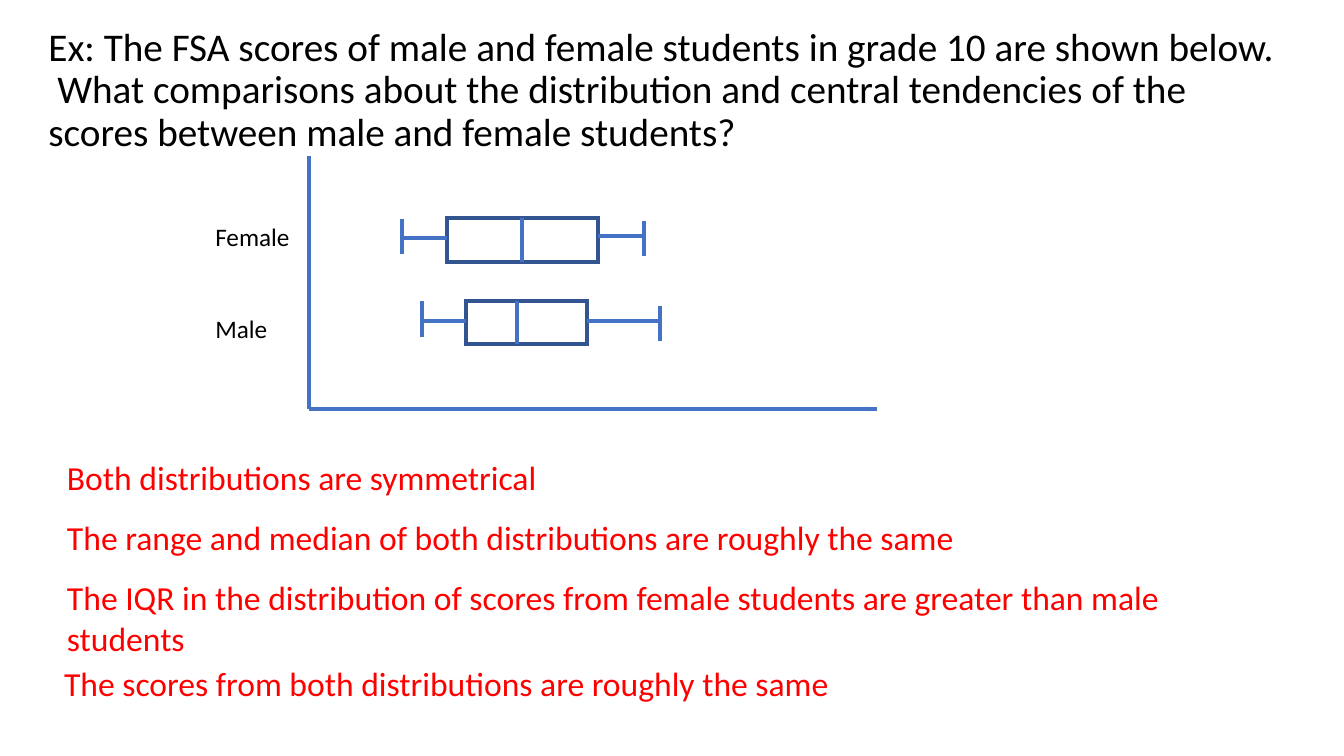
from lxml.etree import SubElement
from pptx import Presentation
from pptx.dml.color import RGBColor
from pptx.enum.shapes import MSO_CONNECTOR, MSO_SHAPE
from pptx.enum.text import MSO_AUTO_SIZE
from pptx.oxml.ns import qn
from pptx.util import Pt

THEME = {
    "font": "Calibri",
    "text": RGBColor.from_string("000000"),
    "answer": RGBColor.from_string("FF0000"),
    "line": RGBColor.from_string("4472C4"),
    "box": RGBColor.from_string("325491"),
    "question_size": Pt(28),
    "label_size": Pt(18),
    "answer_size": Pt(24),
    "line_width": Pt(3),
}


def add_line(x1, y1, x2, y2):
    connector = shapes.add_connector(
        MSO_CONNECTOR.STRAIGHT, Pt(x1), Pt(y1), Pt(x2), Pt(y2))
    connector.line.color.rgb = THEME["line"]
    connector.line.width = THEME["line_width"]
    SubElement(connector._element.spPr, qn("a:effectLst"))


def write_text(shape, text, size, color, auto_size):
    frame = shape.text_frame
    frame.word_wrap = True
    frame.auto_size = auto_size
    paragraph = frame.paragraphs[0]
    run = paragraph.add_run()
    run.text = text
    for name, value in {"name": THEME["font"], "size": size}.items():
        setattr(run.font, name, value)
    run.font.color.rgb = color
    return paragraph


presentation = Presentation()
presentation.slide_width = Pt(960)
presentation.slide_height = Pt(540)
slide = presentation.slides.add_slide(presentation.slide_layouts[1])
shapes = slide.shapes
title = shapes.title._element
title.getparent().remove(title)

question = slide.placeholders[1]
question_area = {"left": 27.4, "top": 16.2, "width": 893.5, "height": 104.4}
for name, value in question_area.items():
    setattr(question, name, Pt(value))
paragraph = write_text(
    question,
    "Ex: The FSA scores of male and female students in grade 10 are shown below. "
    " What comparisons about the distribution and central tendencies of the "
    "scores between male and female students?",
    THEME["question_size"], THEME["text"], MSO_AUTO_SIZE.NONE)
for name, value in {"line_spacing": 0.9, "space_before": Pt(10)}.items():
    setattr(paragraph, name, value)
properties = paragraph._p.get_or_add_pPr()
for name in ("marL", "indent"):
    properties.set(name, "0")
SubElement(properties, qn("a:buNone"))

BOX_HEIGHT, CAP_HEIGHT = 31, 25.2
box_plots = [
    {"name": "Female", "label_top": 154.4, "top": 155.9,
     "low": 287.3, "first": 319.5, "median": 373, "third": 427, "high": 460,
     "low_y": 170.3, "high_y": 168.5, "low_cap": 156.2, "high_cap": 157.7},
    {"name": "Male", "label_top": 220.3, "top": 215,
     "low": 301.7, "first": 332.6, "median": 369.4, "third": 419.2, "high": 471.6,
     "low_y": 229.5, "high_y": 229.5, "low_cap": 215.3, "high_cap": 218.6},
]
for plot in box_plots:
    box = shapes.add_shape(
        MSO_SHAPE.RECTANGLE, Pt(plot["first"]), Pt(plot["top"]),
        Pt(plot["third"] - plot["first"]), Pt(BOX_HEIGHT))
    box.shadow.inherit = False
    box.fill.background()
    box.line.color.rgb = THEME["box"]
    box.line.width = THEME["line_width"]
    SubElement(box.line._get_or_add_ln(), qn("a:miter")).set("lim", "800000")
    for x, top, height in [
        (plot["median"], plot["top"], BOX_HEIGHT),
        (plot["low"], plot["low_cap"], CAP_HEIGHT),
        (plot["high"], plot["high_cap"], CAP_HEIGHT),
    ]:
        add_line(x, top, x, top + height)
    for start, end, y in [
        (plot["low"], plot["first"], plot["low_y"]),
        (plot["third"], plot["high"], plot["high_y"]),
    ]:
        add_line(start, y, end, y)

ORIGIN_X, ORIGIN_Y = 220.6, 292.3
add_line(ORIGIN_X, ORIGIN_Y, 626.4, ORIGIN_Y)
add_line(ORIGIN_X, ORIGIN_Y, ORIGIN_X, 111.6)

for plot in box_plots:
    label = shapes.add_textbox(Pt(146.7), Pt(plot["label_top"]), Pt(106.6), Pt(29))
    write_text(label, plot["name"], THEME["label_size"], THEME["text"],
               MSO_AUTO_SIZE.SHAPE_TO_FIT_TEXT)

answers = [
    (40.8, 323, 36, "Both distributions are symmetrical"),
    (40.8, 366, 36, "The range and median of both distributions are roughly the same"),
    (40.8, 408.7, 65.5, "The IQR in the distribution of scores from female students "
                        "are greater than male students"),
    (38.7, 470.2, 36, "The scores from both distributions are roughly the same"),
]
for left, top, height, text in answers:
    answer = shapes.add_textbox(Pt(left), Pt(top), Pt(866.2), Pt(height))
    write_text(answer, text, THEME["answer_size"], THEME["answer"],
               MSO_AUTO_SIZE.SHAPE_TO_FIT_TEXT)

presentation.save("out.pptx")
